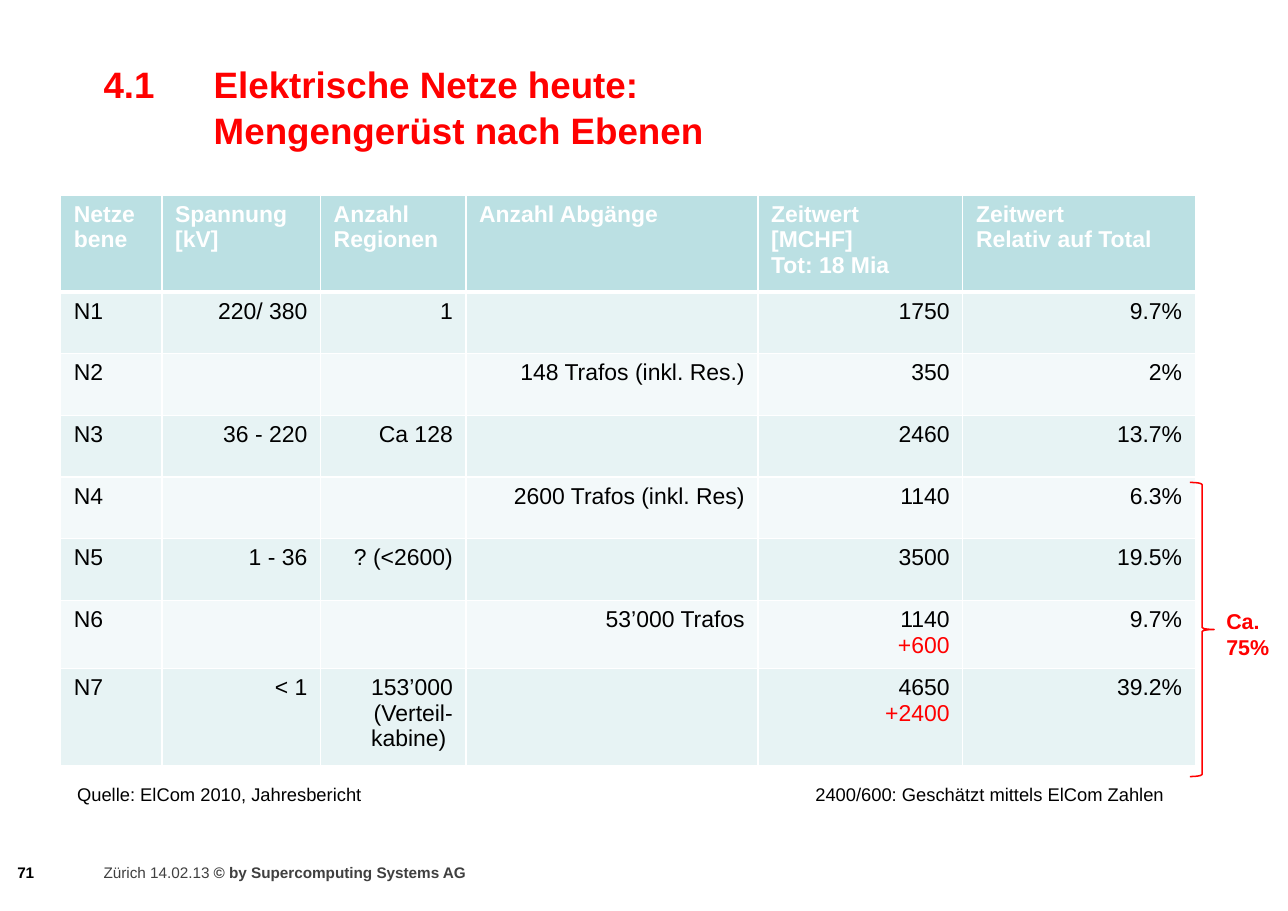
import dataclasses

import lxml.etree
import pptx
import pptx.dml.color
import pptx.enum.shapes
import pptx.enum.text
import pptx.oxml.ns
import pptx.shapes.autoshape
import pptx.slide
import pptx.table
import pptx.text.text
import pptx.util

Inches = pptx.util.Inches
Pt = pptx.util.Pt
Align = pptx.enum.text.PP_ALIGN
Anchor = pptx.enum.text.MSO_ANCHOR
qn = pptx.oxml.ns.qn

RED = "FF0000"
BLACK = "000000"
WHITE = "FFFFFF"
GREY = "404040"
HEADER_FILL = "BBE0E3"
BAND_FILLS = ("F3F9FA", "E7F3F4")

COLUMN_WIDTHS = (0.92, 1.44, 1.32, 2.65, 1.86, 2.11)
ROW_HEIGHTS = (0.88, 0.56, 0.56, 0.56, 0.56, 0.56, 0.62, 0.88)
ROWS = (
    ("Netzebene", "Spannung [kV]", "Anzahl Regionen", "Anzahl Abgänge",
     "Zeitwert\n[MCHF]\nTot: 18 Mia", "Zeitwert\nRelativ auf Total"),
    ("N1", "220/ 380", "1", "", "1750", "9.7%"),
    ("N2", "", "", "148 Trafos (inkl. Res.)", "350", "2%"),
    ("N3", "36 - 220", "Ca 128", "", "2460", "13.7%"),
    ("N4", "", "", "2600 Trafos (inkl. Res)", "1140", "6.3%"),
    ("N5", "1 - 36", "? (<2600)", "", "3500", "19.5%"),
    ("N6", "", "", "53’000 Trafos", "1140\n+600", "9.7%"),
    ("N7", "< 1", "153’000 (Verteil-kabine) ", "", "4650\n+2400", "39.2%"),
)


@dataclasses.dataclass
class Span:
    text: str
    bold: bool = False


@dataclasses.dataclass
class Label:
    left: float
    top: float
    width: float
    height: float
    spans: tuple[Span, ...]
    size: float
    color: str = BLACK
    align: Align = Align.LEFT


LABELS = (
    Label(0, 7.78, 0.42, 0.32, (Span("71", True),), 10, align=Align.RIGHT),
    Label(0.83, 7.78, 6.21, 0.28,
          (Span("Zürich 14.02.13 "), Span("© by Supercomputing Systems AG", True)), 10, GREY),
    Label(7.29, 7.05, 3.51, 0.32, (Span("2400/600: Geschätzt mittels ElCom Zahlen"),), 12),
    Label(0.59, 7.05, 3.44, 0.32, (Span("Quelle: ElCom 2010, Jahresbericht"),), 12),
    Label(11.02, 5.46, 0.65, 0.59, (Span("Ca. 75%", True),), 14, RED),
)


def rgb(color: str) -> pptx.dml.color.RGBColor:
    return pptx.dml.color.RGBColor.from_string(color)


def format_font(font: pptx.text.text.Font, size: float, color: str, bold: bool) -> None:
    font.name = "Arial"
    font.size = Pt(size)
    font.bold = bold
    font.color.rgb = rgb(color)


def set_margins(target: pptx.text.text.TextFrame | pptx.table._Cell, side: float) -> None:
    target.margin_left = target.margin_right = Inches(side)
    target.margin_top = target.margin_bottom = Inches(0.06)


def fill_title(page: pptx.slide.Slide) -> None:
    title = page.shapes.title
    title.left, title.top = Inches(0.83), Inches(0.46)
    title.width, title.height = Inches(10.23), Inches(1)
    frame = title.text_frame
    frame.text = "4.1\tElektrische Netze heute:\v\tMengengerüst nach Ebenen"
    frame.word_wrap = True
    frame.auto_size = pptx.enum.text.MSO_AUTO_SIZE.NONE
    frame.vertical_anchor = Anchor.MIDDLE
    set_margins(frame, 0.11)
    para = frame.paragraphs[0]
    para.alignment = Align.LEFT
    para.line_spacing = 1.05
    tabs = lxml.etree.SubElement(para._p.get_or_add_pPr(), qn("a:tabLst"))
    lxml.etree.SubElement(tabs, qn("a:tab"), pos=str(Inches(1)), algn="l")
    for line_break in para._p.findall(qn("a:br")):
        lxml.etree.SubElement(line_break, qn("a:rPr"), sz="2400")
    for span in para.runs:
        format_font(span.font, 24, RED, True)


def add_border(cell: pptx.table._Cell, side: str, width: float) -> None:
    properties = cell._tc.get_or_add_tcPr()
    line = lxml.etree.SubElement(properties, qn(f"a:ln{side}"), w=str(Pt(width)))
    fill = lxml.etree.SubElement(line, qn("a:solidFill"))
    lxml.etree.SubElement(fill, qn("a:srgbClr"), val=WHITE)


def fill_cell(cell: pptx.table._Cell, text: str, row: int, column: int) -> None:
    header = row == 0
    set_margins(cell, 0.12)
    for side in "LRTB":
        heavy = (header and side == "B") or (row == 1 and side == "T")
        add_border(cell, side, 3 if heavy else 1)
    cell.fill.solid()
    cell.fill.fore_color.rgb = rgb(HEADER_FILL if header else BAND_FILLS[row % 2])
    cell.text_frame.text = text
    for para in cell.text_frame.paragraphs:
        para.alignment = Align.LEFT if header or column == 0 else Align.RIGHT
        for span in para.runs:
            color = WHITE if header else RED if span.text.startswith("+") else BLACK
            format_font(span.font, 15, color, header)


def add_network_table(page: pptx.slide.Slide) -> None:
    table = page.shapes.add_table(
        len(ROWS), len(COLUMN_WIDTHS), Inches(0.55), Inches(1.77),
        Inches(sum(COLUMN_WIDTHS)), Inches(sum(ROW_HEIGHTS))).table
    for column, width in zip(table.columns, COLUMN_WIDTHS):
        column.width = Inches(width)
    for row, height in zip(table.rows, ROW_HEIGHTS):
        row.height = Inches(height)
    for row_index, texts in enumerate(ROWS):
        for column_index, text in enumerate(texts):
            fill_cell(table.cell(row_index, column_index), text, row_index, column_index)


def add_label(page: pptx.slide.Slide, label: Label) -> None:
    box = page.shapes.add_textbox(
        Inches(label.left), Inches(label.top), Inches(label.width), Inches(label.height))
    frame = box.text_frame
    frame.word_wrap = True
    set_margins(frame, 0.11)
    para = frame.paragraphs[0]
    para.alignment = label.align
    for part in label.spans:
        span = para.add_run()
        span.text = part.text
        format_font(span.font, label.size, label.color, part.bold)


def add_brace(page: pptx.slide.Slide) -> None:
    brace = page.shapes.add_shape(
        pptx.enum.shapes.MSO_SHAPE.RIGHT_BRACE,
        Inches(10.8), Inches(4.38), Inches(0.22), Inches(2.67))
    brace.shadow.inherit = False
    brace.fill.background()
    brace.line.color.rgb = rgb(RED)
    brace.line.width = Pt(1)


def main() -> None:
    deck = pptx.Presentation()
    deck.slide_width, deck.slide_height = Inches(11.69), Inches(8.27)
    page = deck.slides.add_slide(deck.slide_layouts[5])
    fill_title(page)
    add_network_table(page)
    for label in LABELS:
        add_label(page, label)
    add_brace(page)
    deck.save("out.pptx")


if __name__ == "__main__":
    main()
